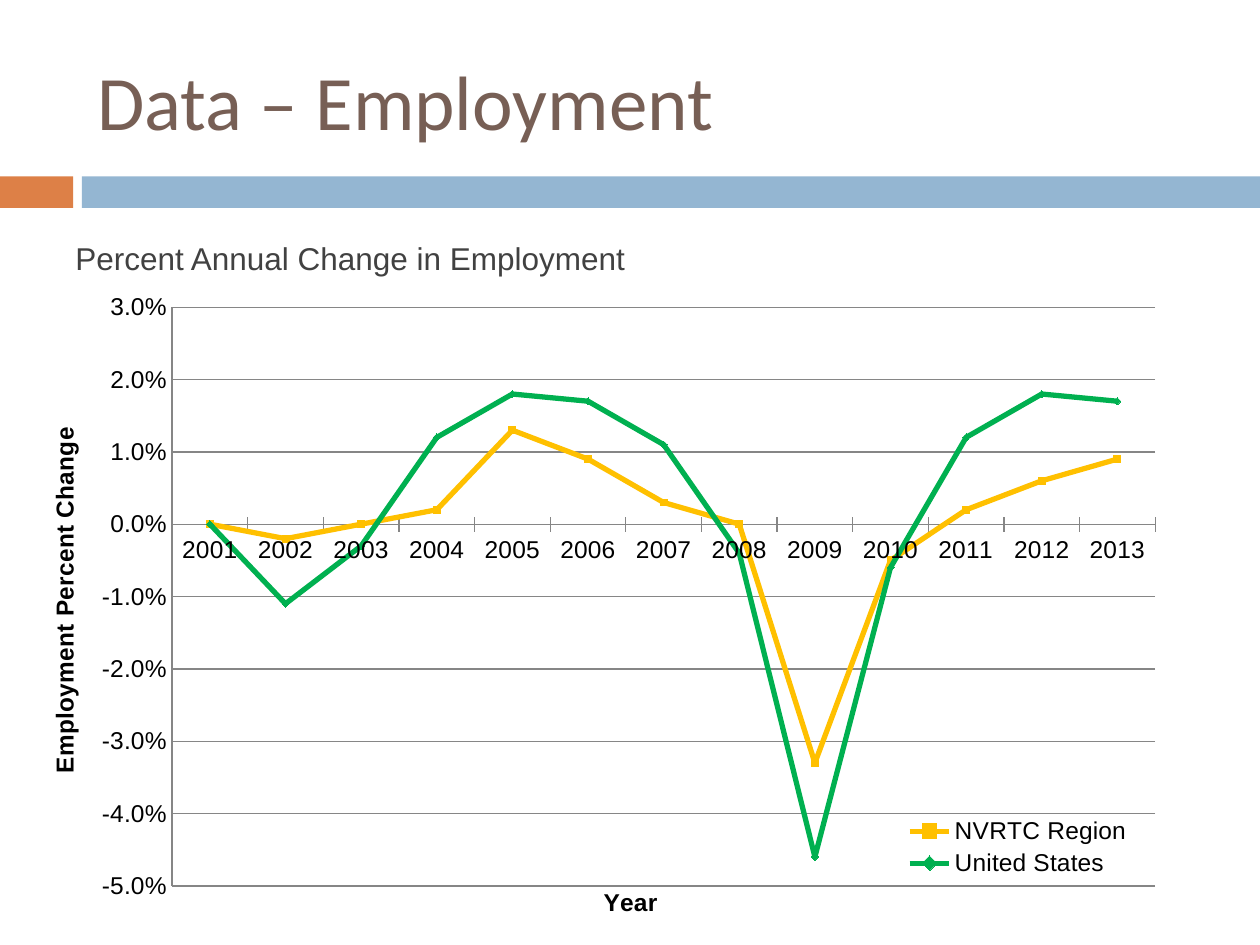
from dataclasses import dataclass

from pptx import Presentation
from pptx.chart.data import CategoryChartData
from pptx.dml.color import RGBColor
from pptx.enum.chart import XL_CHART_TYPE as ChartType
from pptx.enum.chart import XL_LEGEND_POSITION as LegendPosition
from pptx.enum.chart import XL_MARKER_STYLE as Marker
from pptx.enum.chart import XL_TICK_MARK as TickMark
from pptx.enum.shapes import MSO_SHAPE as Preset
from pptx.enum.text import MSO_ANCHOR as Anchor
from pptx.oxml.ns import qn
from pptx.util import Inches, Pt

ORANGE = RGBColor(0xDD, 0x80, 0x47)
BLUE = RGBColor(0x94, 0xB6, 0xD2)
BROWN = RGBColor(0x77, 0x5F, 0x55)
DARK_GRAY = RGBColor(0x41, 0x41, 0x41)
AXIS_GRAY = RGBColor(0x86, 0x86, 0x86)
GOLD = RGBColor(0xFF, 0xC0, 0x00)
GREEN = RGBColor(0x00, 0xB0, 0x50)
BLACK = RGBColor(0, 0, 0)

SLIDE_WIDTH, SLIDE_HEIGHT = 10, 7.5
BAND_TOP, BAND_HEIGHT = 1.4, 0.25
YEARS = [str(year) for year in range(2001, 2014)]


@dataclass(frozen=True)
class Band:
    left: float
    right: float
    color: RGBColor


@dataclass(frozen=True)
class Trend:
    name: str
    tenths: tuple[int, ...]  # annual change in tenths of a percent
    color: RGBColor
    marker: Marker


BANDS = (Band(0, 0.58, ORANGE), Band(0.65, SLIDE_WIDTH, BLUE))
TRENDS = (
    Trend("NVRTC Region", (0, -2, 0, 2, 13, 9, 3, 0, -33, -5, 2, 6, 9),
          GOLD, Marker.SQUARE),
    Trend("United States", (0, -11, -3, 12, 18, 17, 11, -4, -46, -6, 12, 18, 17),
          GREEN, Marker.DIAMOND),
)


def box(left: float, top: float, width: float, height: float) -> tuple:
    return Inches(left), Inches(top), Inches(width), Inches(height)


def add_run(paragraph, text: str, font_name: str, size: float,
            color: RGBColor, bold: bool = False) -> None:
    run = paragraph.add_run()
    run.text = text
    font = run.font
    font.name, font.size, font.bold = font_name, Pt(size), bold
    font.color.rgb = color


def add_band(slide, band: Band) -> None:
    shape = slide.shapes.add_shape(
        Preset.RECTANGLE,
        *box(band.left, BAND_TOP, band.right - band.left, BAND_HEIGHT))
    shape.shadow.inherit = False
    shape.fill.solid()
    shape.fill.fore_color.rgb = band.color
    shape.line.fill.background()


def set_title(slide) -> None:
    title = slide.shapes.title
    title.left, title.top, title.width, title.height = box(0.67, 0.25, 8.92, 1.08)
    frame = title.text_frame
    frame.vertical_anchor = Anchor.MIDDLE
    paragraph = frame.paragraphs[0]
    paragraph.alignment = 1
    add_run(paragraph, "Data – Employment", "Calibri", 44, BROWN)


def add_subtitle(slide) -> None:
    frame = slide.shapes.add_textbox(*box(0.5, 1.83, 9.33, 0.44)).text_frame
    frame.word_wrap = True
    frame.vertical_anchor = Anchor.MIDDLE
    add_run(frame.paragraphs[0], "Percent Annual Change in Employment",
            "Arial", 18, DARK_GRAY)


def set_layout(parent, index: int, **settings) -> None:
    """Give a chart part a manual layout, in shares of the chart's size."""
    for old in parent.findall(qn("c:layout")):
        parent.remove(old)
    layout = parent.makeelement(qn("c:layout"), {})
    parent.insert(index, layout)
    manual = layout.makeelement(qn("c:manualLayout"), {})
    layout.append(manual)
    for tag, value in settings.items():
        manual.append(manual.makeelement(qn(f"c:{tag}"), {"val": str(value)}))


def style_axis(axis, title: str) -> None:
    axis.minor_tick_mark = TickMark.NONE
    axis.format.line.color.rgb = AXIS_GRAY
    axis.format.line.width = Pt(0.75)
    add_run(axis.axis_title.text_frame.paragraphs[0], title,
            "Arial", 14, BLACK, bold=True)


def style_trend(series, trend: Trend) -> None:
    series.smooth = False
    series.format.line.color.rgb = trend.color
    series.format.line.width = Pt(3)
    marker = series.marker
    marker.style, marker.size = trend.marker, 4
    marker.format.fill.solid()
    marker.format.fill.fore_color.rgb = trend.color
    marker.format.line.color.rgb = trend.color


def add_employment_chart(slide) -> None:
    data = CategoryChartData(number_format="0.0%")
    data.categories = YEARS
    for trend in TRENDS:
        data.add_series(trend.name, [value / 1000 for value in trend.tenths])
    chart = slide.shapes.add_chart(
        ChartType.LINE_MARKERS, *box(0.26, 2.33, 8.99, 5), data).chart
    chart.has_title = False
    chart.font.name, chart.font.size = "Arial", Pt(14)
    chart.font.color.rgb = BLACK
    chart.plots[0].vary_by_categories = False
    for series, trend in zip(chart.plots[0].series, TRENDS):
        style_trend(series, trend)

    years, change = chart.category_axis, chart.value_axis
    style_axis(years, "Year")
    style_axis(change, "Employment Percent Change")
    years.major_tick_mark = TickMark.CROSS
    change.major_tick_mark = TickMark.NONE
    change.minimum_scale, change.maximum_scale, change.major_unit = -0.05, 0.03, 0.01
    change.tick_labels.number_format = "0.0%"
    change.tick_labels.number_format_is_linked = False
    change.has_major_gridlines = True
    change.major_gridlines.format.line.color.rgb = AXIS_GRAY
    change.major_gridlines.format.line.width = Pt(0.75)

    chart.has_legend = True
    chart.legend.position = LegendPosition.RIGHT
    chart.legend.include_in_layout = False

    def part(query: str):
        return chart.element.xpath(query)[0]

    edges = {"xMode": "edge", "yMode": "edge"}
    set_layout(part("//c:plotArea"), 0, layoutTarget="inner", **edges,
               x=0.123, y=0.021, w=0.868, h=0.926)
    set_layout(part("//c:legend"), 1, **edges, x=0.76, y=0.83, w=0.22, h=0.11)
    set_layout(part("//c:catAx/c:title"), 1, **edges, x=0.5, y=0.94)
    set_layout(part("//c:valAx/c:title"), 1, **edges, x=0.01, y=0.21)


def main() -> None:
    deck = Presentation()
    deck.slide_width, deck.slide_height = Inches(SLIDE_WIDTH), Inches(SLIDE_HEIGHT)
    slide = deck.slides.add_slide(deck.slide_layouts.get_by_name("Title Only"))
    for band in BANDS:
        add_band(slide, band)
    set_title(slide)
    add_subtitle(slide)
    add_employment_chart(slide)
    deck.save("out.pptx")


if __name__ == "__main__":
    main()
